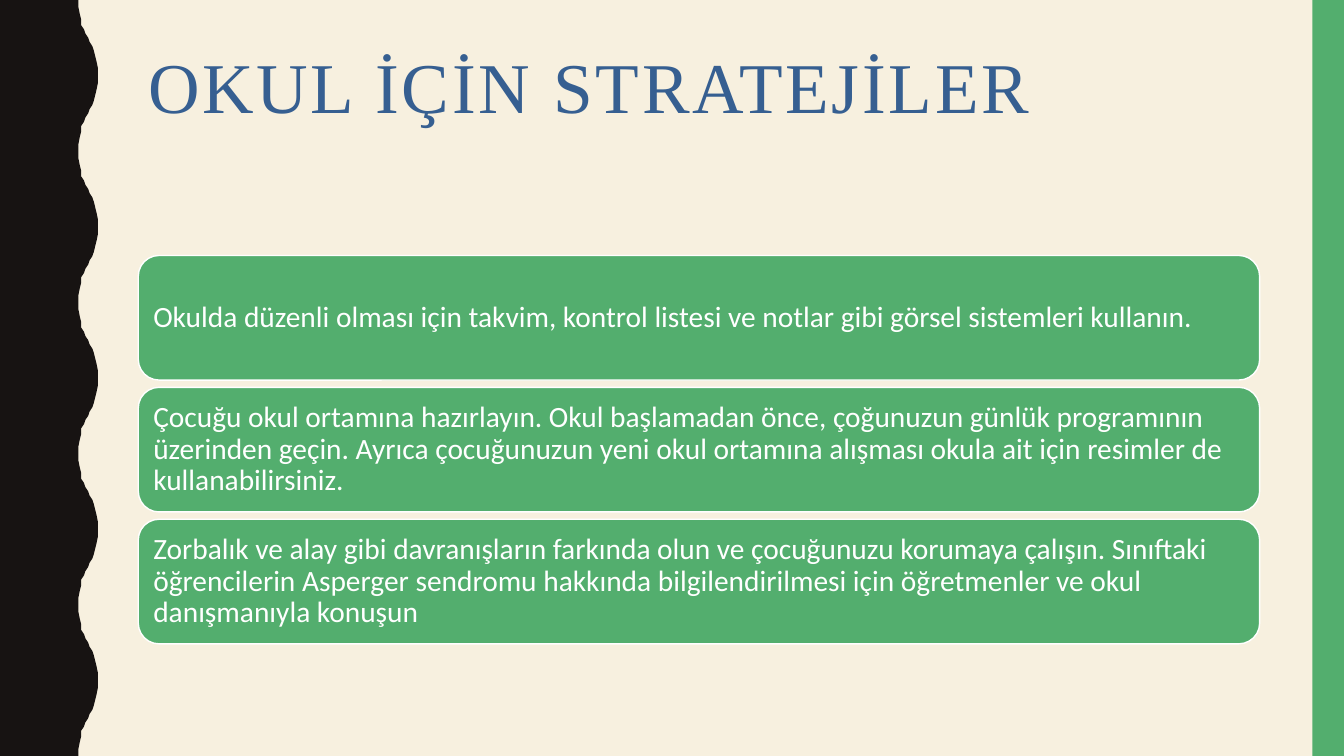
from pptx import Presentation
from pptx.dml.color import RGBColor
from pptx.enum.shapes import MSO_SHAPE
from pptx.enum.text import MSO_ANCHOR, PP_ALIGN
from pptx.util import Pt

RECT = MSO_SHAPE.RECTANGLE
ROUND = MSO_SHAPE.ROUNDED_RECTANGLE
TOP, MIDDLE = MSO_ANCHOR.TOP, MSO_ANCHOR.MIDDLE
LEFT = PP_ALIGN.LEFT
COLORS = {
    "cream": "F7F0DF",
    "black": "171312",
    "green": "53AE6E",
    "blue": "365F91",
    "white": "FFFFFF",
}
WIDTH, HEIGHT = 960, 540


def color(name):
    return RGBColor.from_string(COLORS[name])


def write(shape, text, size, font, tint, anchor, inset):
    frame = shape.text_frame
    frame.word_wrap = True
    frame.vertical_anchor = anchor
    frame.margin_left = frame.margin_right = Pt(inset)
    frame.margin_top = frame.margin_bottom = Pt(7.2)
    para = frame.paragraphs[0]
    para.alignment = LEFT
    para.line_spacing = 0.9
    run = para.add_run()
    run.text = text
    run.font.size = Pt(size)
    run.font.name = font
    run.font.color.rgb = color(tint)
    return run


deck = Presentation()
deck.slide_width, deck.slide_height = Pt(WIDTH), Pt(HEIGHT)
slide = deck.slides.add_slide(deck.slide_layouts[6])
slide.background.fill.solid()
slide.background.fill.fore_color.rgb = color("cream")
shapes = slide.shapes

bend = [(56, 0), (56.2, 5), (56.8, 10), (57.6, 14.4), (58.5, 18),
        (59.8, 21), (61.2, 24), (62.7, 27), (64.2, 30), (65.6, 33),
        (67, 36), (68.3, 39.6), (69.3, 44), (69.8, 49), (70, 54)]
wave = bend + [(x, 108 - y) for x, y in bend[-2::-1]]
edge = [(x, y + 108 * turn) for turn in range(5) for x, y in wave]
pen = shapes.build_freeform(0, 0, scale=Pt(1))
pen.add_line_segments(edge + [(0, HEIGHT)], close=True)
band = pen.convert_to_shape()
bar = shapes.add_shape(RECT, Pt(937.5), 0, Pt(22.5), Pt(HEIGHT))
for part, tint in ((band, "black"), (bar, "green")):
    part.shadow.inherit = False
    part.fill.solid()
    part.fill.fore_color.rgb = color(tint)
    part.line.fill.background()

title = shapes.add_textbox(Pt(98.8), Pt(30), Pt(801), Pt(117))
head = write(title, "OKUL İÇİN STRATEJİLER", 51, "Times New Roman",
             "blue", TOP, 7.2)
head._r.get_or_add_rPr().set("spc", "200")

tips = [
    "Okulda düzenli olması için takvim, kontrol listesi ve notlar gibi "
    "görsel sistemleri kullanın.",
    "Çocuğu okul ortamına hazırlayın. Okul başlamadan önce, çoğunuzun "
    "günlük programının üzerinden geçin. Ayrıca çocuğunuzun yeni okul "
    "ortamına alışması okula ait için resimler de kullanabilirsiniz.",
    "Zorbalık ve alay gibi davranışların farkında olun ve çocuğunuzu "
    "korumaya çalışın. Sınıftaki öğrencilerin Asperger sendromu hakkında "
    "bilgilendirilmesi için öğretmenler ve okul danışmanıyla konuşun",
]
for row, tip in enumerate(tips):
    card = shapes.add_shape(ROUND, Pt(98.8), Pt(182.5 + 94.2 * row),
                            Pt(801), Pt(89))
    card.shadow.inherit = False
    card.fill.solid()
    card.fill.fore_color.rgb = color("green")
    card.line.color.rgb = color("white")
    card.line.width = Pt(1)
    write(card, tip, 21, "Calibri", "white", MIDDLE, 6.4)

deck.save("out.pptx")
